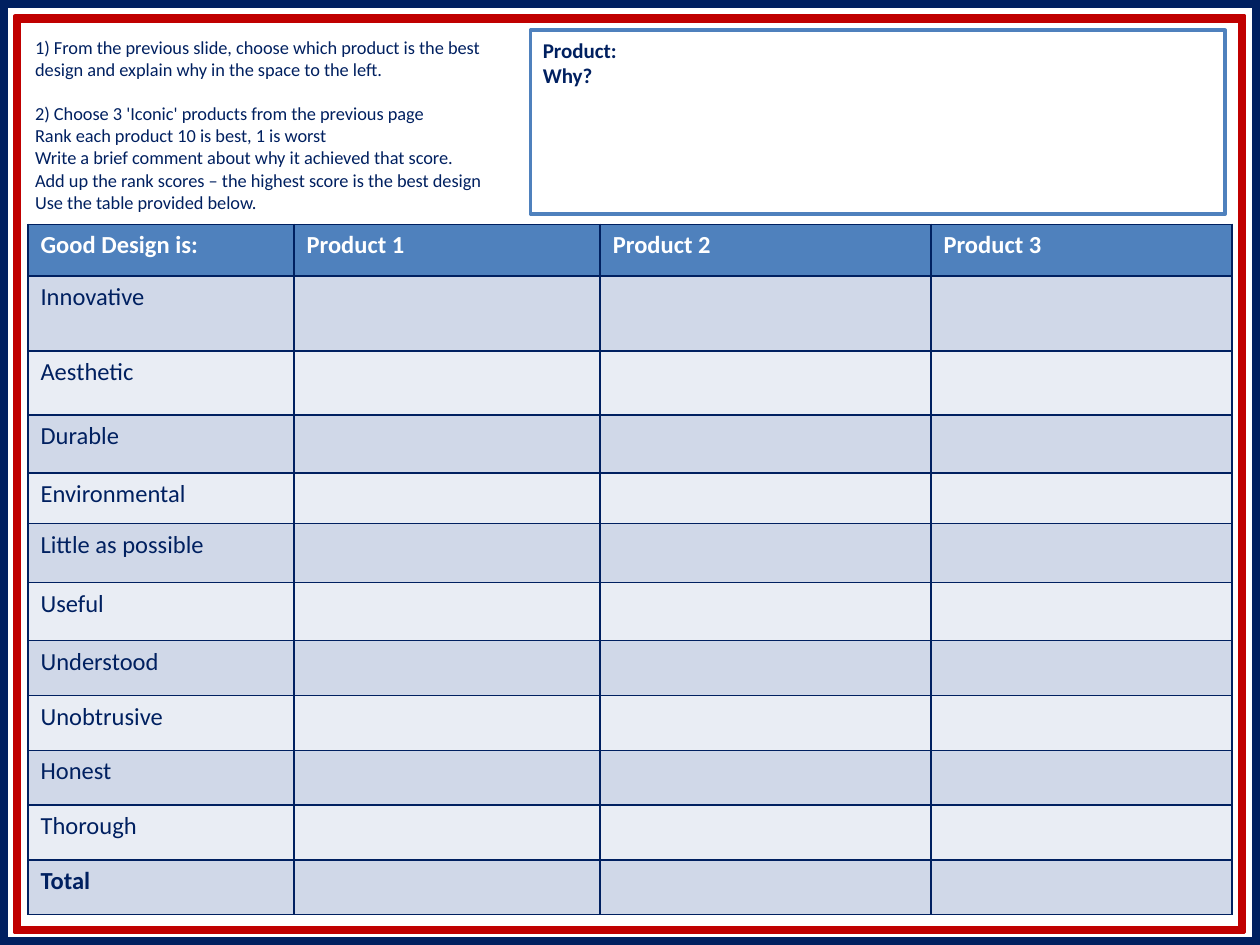
import dataclasses

import lxml.etree
import pptx
import pptx.dml.color
import pptx.enum.shapes
import pptx.oxml.ns
import pptx.util

Pt = pptx.util.Pt
qn = pptx.oxml.ns.qn
SHAPE = pptx.enum.shapes.MSO_SHAPE


@dataclasses.dataclass(frozen=True)
class Theme:
    font: str = "Calibri"
    navy: str = "002060"
    red: str = "C00000"
    blue: str = "4F81BD"
    white: str = "FFFFFF"
    bands: tuple = ("D0D8E8", "E9EDF4")
    small: float = 10.5
    label: float = 12
    cell: float = 14


THEME = Theme()

STEPS = [
    "1) From the previous slide, choose which product is the best design "
    "and explain why in the space to the left.",
    "2) Choose 3 'Iconic' products from the previous page",
    "Rank each product 10 is best, 1 is worst",
    "Write a brief comment about why it achieved that score.",
    "Add up the rank scores – the highest score is the best design",
    "Use the table provided below.",
]
HEADS = ["Good Design is:", "Product 1", "Product 2", "Product 3"]
TRAITS = ["Innovative", "Aesthetic", "Durable", "Environmental",
          "Little as possible", "Useful", "Understood", "Unobtrusive",
          "Honest", "Thorough", "Total"]
WIDTHS = [152, 175, 189, 172]
HEIGHTS = [29.5, 43, 36.5, 33.2, 28.8, 33.8, 33.2] + [31.3] * 5


def color(code):
    return pptx.dml.color.RGBColor.from_string(code)


def write(frame, lines, size, ink=THEME.navy, bold=False, gaps=None):
    for i, line in enumerate(lines):
        para = frame.paragraphs[0] if i == 0 else frame.add_paragraph()
        if gaps and i in gaps:
            para.space_before = Pt(gaps[i])
        run = para.add_run()
        run.text = line
        run.font.name = THEME.font
        run.font.size = Pt(size)
        run.font.bold = bold
        run.font.color.rgb = color(ink)


def add_text(slide, box, lines, **style):
    frame = slide.shapes.add_textbox(*map(Pt, box)).text_frame
    frame.word_wrap = True
    write(frame, lines, **style)


def add_box(slide, kind, box, edge, fill=None, rim=None):
    shape = slide.shapes.add_shape(kind, *map(Pt, box))
    shape.shadow.inherit = False
    if rim:
        shape.adjustments[0] = rim
    if fill:
        shape.fill.solid()
        shape.fill.fore_color.rgb = color(fill)
    else:
        shape.fill.background()
    shape.line.color.rgb = color(edge)
    shape.line.width = Pt(2)


def add_edges(cell, ink):
    props = cell._tc.get_or_add_tcPr()
    for side in ("lnL", "lnR", "lnT", "lnB"):
        line = lxml.etree.SubElement(props, qn("a:" + side), w=str(Pt(1)))
        fill = lxml.etree.SubElement(line, qn("a:solidFill"))
        lxml.etree.SubElement(fill, qn("a:srgbClr"), val=ink)


def fill_cell(cell, text, fill, **style):
    add_edges(cell, THEME.navy)
    cell.fill.solid()
    cell.fill.fore_color.rgb = color(fill)
    write(cell.text_frame, [text], size=THEME.cell, **style)


def add_grid(slide, left, top):
    rows = [HEADS] + [[trait, "", "", ""] for trait in TRAITS]
    table = slide.shapes.add_table(
        len(rows), len(HEADS), Pt(left), Pt(top),
        Pt(sum(WIDTHS)), Pt(sum(HEIGHTS))).table
    for col, width in zip(table.columns, WIDTHS):
        col.width = Pt(width)
    for r, texts in enumerate(rows):
        table.rows[r].height = Pt(HEIGHTS[r])
        head = r == 0
        fill = THEME.blue if head else THEME.bands[(r - 1) % 2]
        ink = THEME.white if head else THEME.navy
        bold = head or texts[0] == "Total"
        for c, text in enumerate(texts):
            fill_cell(table.cell(r, c), text, fill, ink=ink, bold=bold)


def main():
    deck = pptx.Presentation()
    deck.slide_width, deck.slide_height = Pt(720), Pt(540)
    slide = deck.slides.add_slide(deck.slide_layouts[6])
    add_box(slide, SHAPE.FRAME, (0, 0, 720, 540), THEME.navy,
            fill=THEME.navy, rim=0.007)
    add_box(slide, SHAPE.FRAME, (8.6, 9.3, 702.7, 523.5), THEME.red,
            fill=THEME.red, rim=0.005)
    add_grid(slide, 16, 128.2)
    add_text(slide, (13, 17.3, 295.2, 108.7), STEPS, size=THEME.small,
             gaps={1: 12.6})
    add_text(slide, (303.1, 18, 216, 36), ["Product:", "Why?"],
             size=THEME.label, bold=True)
    add_box(slide, SHAPE.RECTANGLE, (303.1, 17.3, 397, 105.1), THEME.blue)
    deck.save("out.pptx")


if __name__ == "__main__":
    main()
